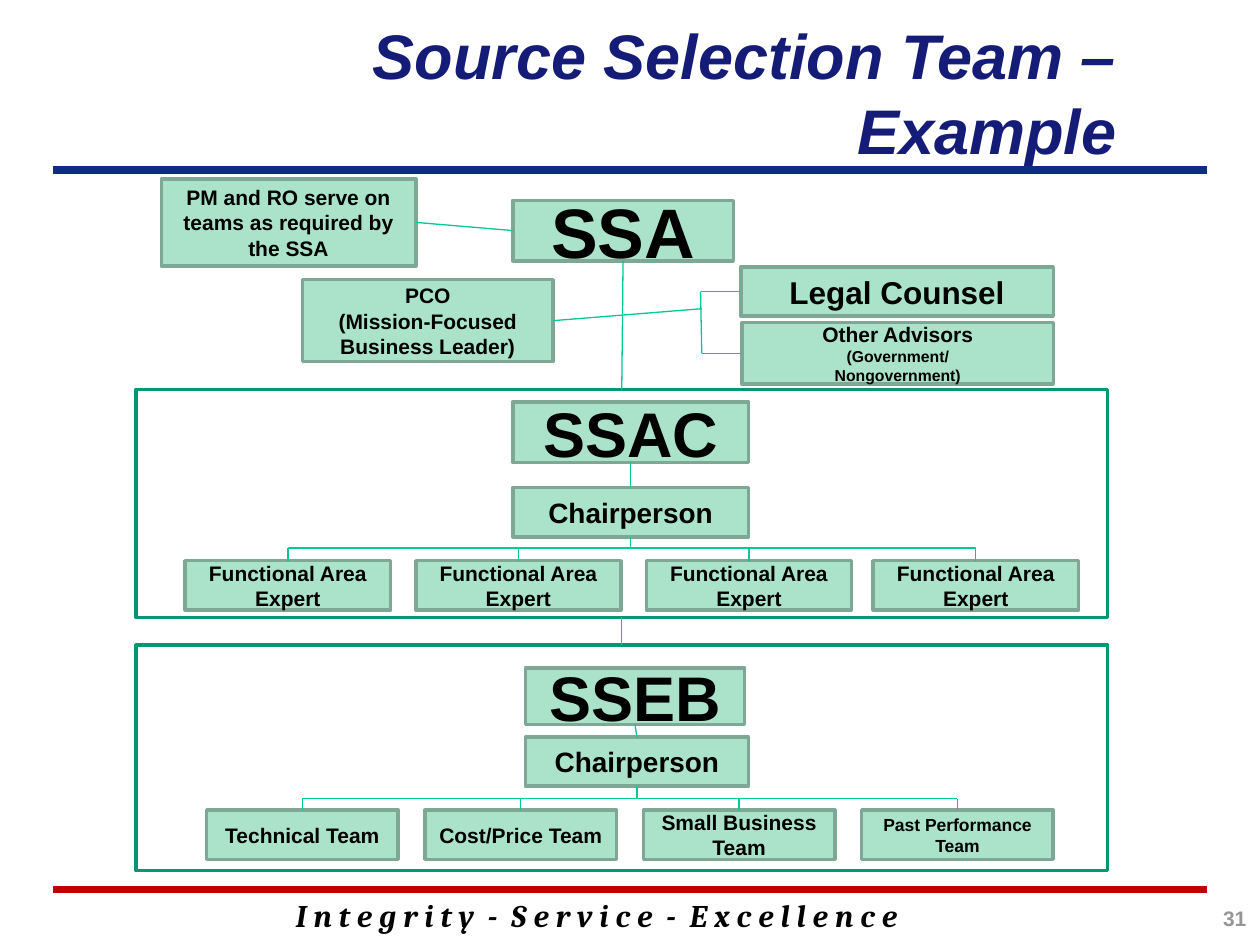
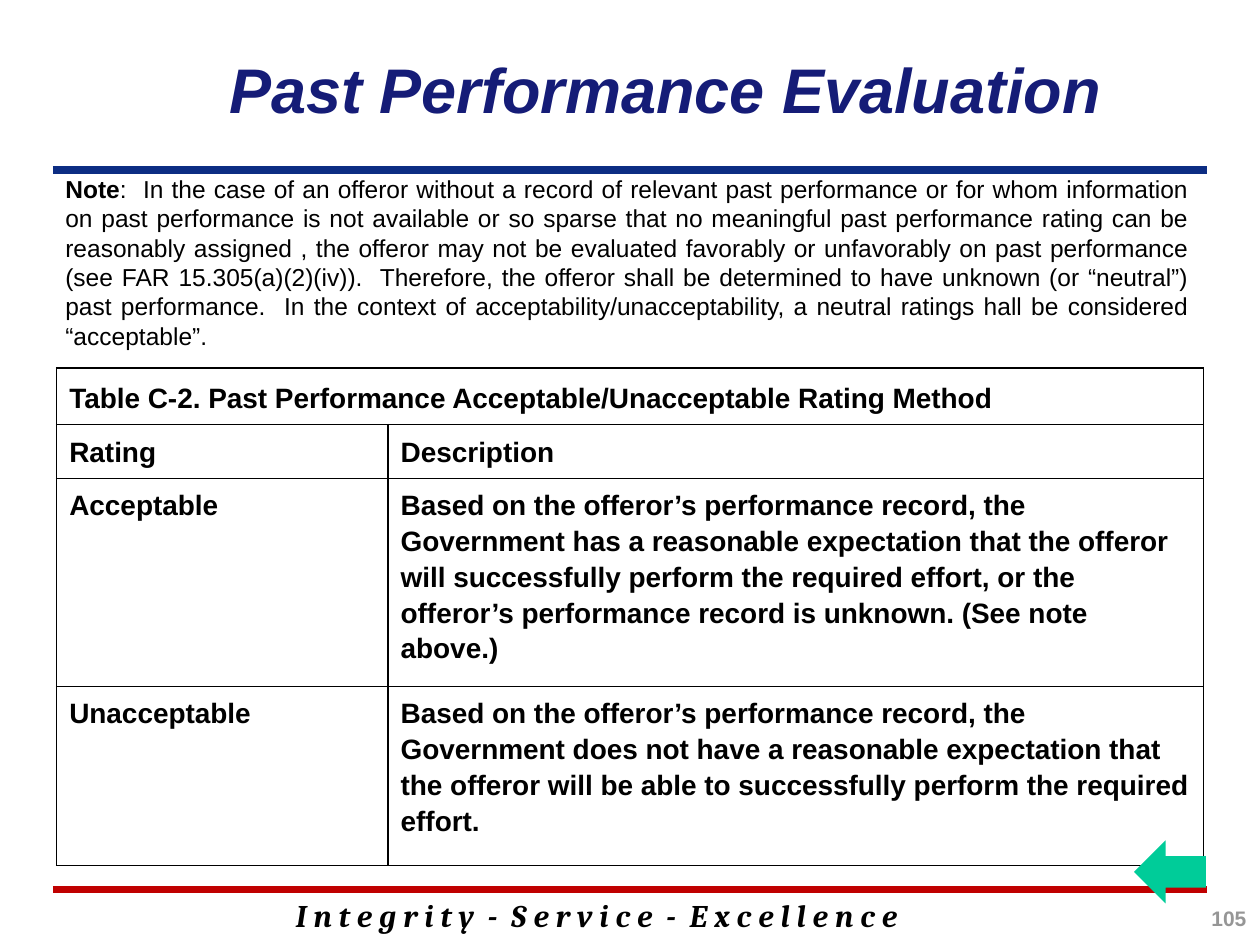
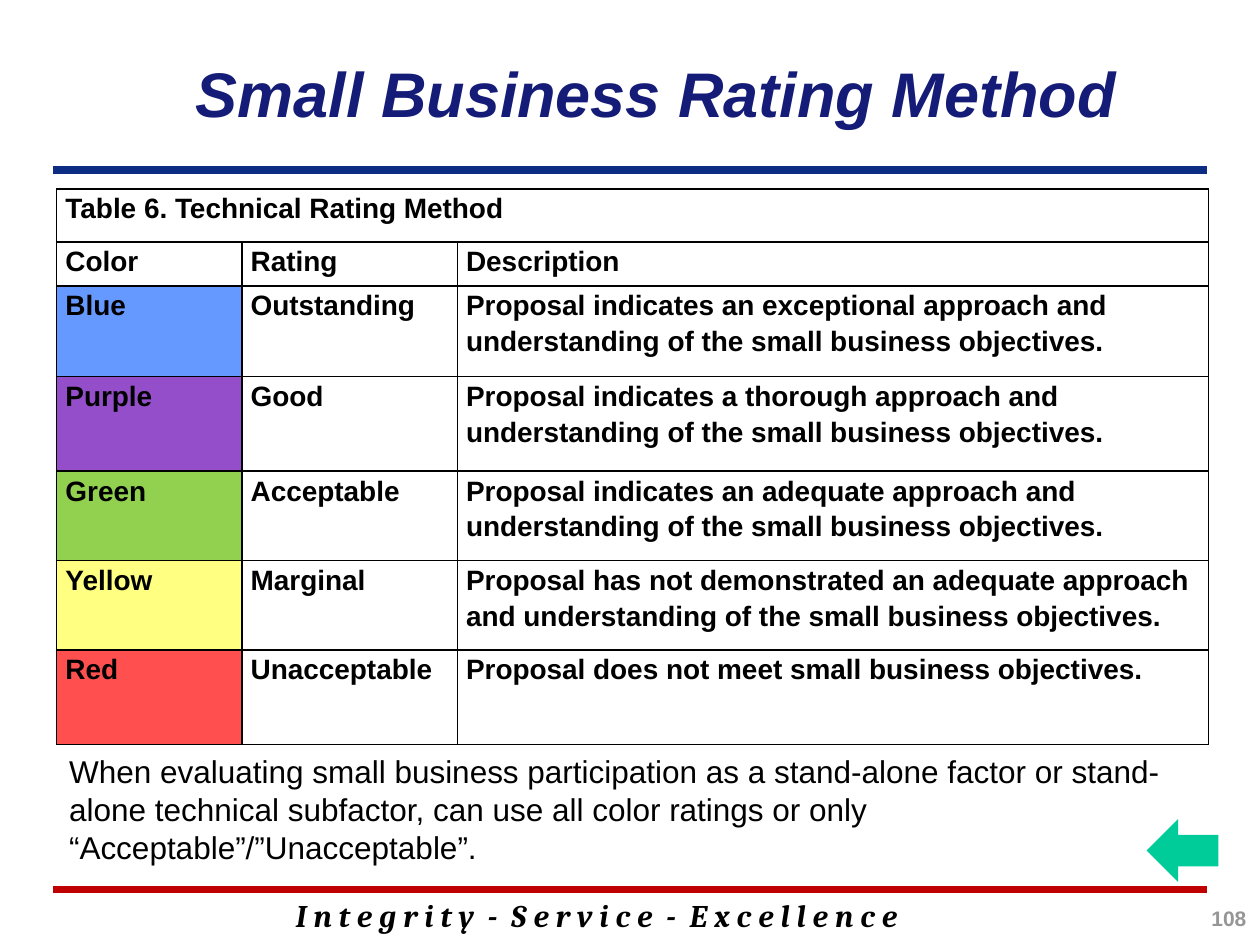
from lxml import etree
from pptx import Presentation
from pptx import util as u
from pptx.dml.color import RGBColor
from pptx.enum import shapes, text
from pptx.oxml import ns

COLORS = {
    "title": "151C77", "top band": "0C2D83", "bottom band": "C00000",
    "ink": "000000", "number": "969696", "arrow": "00CC99",
    "box": "AAE2CA", "box edge": "7EA795", "frame": "009771", "link": "00C896",
    "Blue": "6699FF", "Purple": "954ECA", "Green": "92D050",
    "Yellow": "FFFF81", "Red": "FF4F4F",
}
RGB = {name: RGBColor.from_string(value) for name, value in COLORS.items()}
LEFT, CENTER, RIGHT, JUSTIFY = (
    text.PP_ALIGN.LEFT, text.PP_ALIGN.CENTER, text.PP_ALIGN.RIGHT, text.PP_ALIGN.JUSTIFY)
TOP, LEFT_SIDE, BOTTOM, RIGHT_SIDE = range(4)

prs = Presentation()
prs.slide_width, prs.slide_height = u.Inches(10), u.Inches(7.5)
CELL = prs.slide_width // 100


def write(frame, content, size, color="ink", align=LEFT, bold=True, italic=False,
          face="Arial", later_size=None):
    frame.word_wrap = True
    frame.text = content
    for index, paragraph in enumerate(frame.paragraphs):
        paragraph.alignment = align
        font = paragraph.font
        font.name, font.bold, font.italic = face, bold, italic
        font.size = u.Pt(later_size if index and later_size else size)
        font.color.rgb = RGB[color]


def draw_line(slide, start, end, color="link", width=0.75):
    points = []
    for place, detail in (start, end):
        points += [0, 0] if hasattr(place, "left") else [int(place * CELL), int(detail * CELL)]
    line = slide.shapes.add_connector(shapes.MSO_CONNECTOR.STRAIGHT, *points)
    if hasattr(start[0], "left"):
        line.begin_connect(*start)
    if hasattr(end[0], "left"):
        line.end_connect(*end)
    line.line.color.rgb = RGB[color]
    line.line.width = u.Pt(width)
    etree.SubElement(line._element.spPr, ns.qn("a:effectLst"))


pages = [
    ("Source Selection Team –\vExample", "31", (14.4, 1.2, 75.2, 12.2)),
    ("Past Performance Evaluation", "105", (4.2, 1.3, 84.2, 11.4)),
    ("Small Business Rating Method", "108", (14.4, 1.2, 75.2, 12.2)),
]
motto = "I n t e g r i t y  -  S e r v i c e  -  E x c e l l e n c e"
for heading, number, area in pages:
    slide = prs.slides.add_slide(prs.slide_layouts[5])
    for y, band in ((70.6, "bottom band"), (13.5, "top band")):
        draw_line(slide, (4.2, y), (95.8, y), band, 4.5)
    footer = slide.shapes.add_textbox(*[int(n * CELL) for n in (22.5, 70.6, 60.8, 4)])
    write(footer.text_frame, motto, 18, italic=True, face="Cambria")
    page_number = slide.shapes.add_textbox(*[int(n * CELL) for n in (87.4, 71.4, 12.5, 3.3)])
    write(page_number.text_frame, number, 12, "number", RIGHT)
    title = slide.shapes.title
    title.left, title.top, title.width, title.height = [int(n * CELL) for n in area]
    title.text_frame.auto_size = text.MSO_AUTO_SIZE.NONE
    title.text_frame.vertical_anchor = text.MSO_ANCHOR.MIDDLE
    write(title.text_frame, heading, 36, "title", RIGHT, italic=True)

team, past_performance, small_business = prs.slides

boxes = {
    "ssa": ("SSA", 40, 40.7, 15.9, 17.5, 4.8),
    "pm": ("PM and RO serve on teams as required by the SSA", 12, 12.8, 14.2, 20.2, 6.9),
    "pco": ("PCO\n(Mission-Focused Business Leader)", 12, 24, 22.2, 19.9, 6.5),
    "legal": ("Legal Counsel", 18, 58.8, 21.2, 24.8, 3.9),
    "advisors": ("Other Advisors\n(Government/\nNongovernment)", 12, 58.9, 25.6, 24.7, 4.9),
    "ssac": ("SSAC", 36, 40.7, 31.9, 18.7, 4.8),
    "ssac chair": ("Chairperson", 16, 40.7, 38.7, 18.7, 3.9),
    "sseb": ("SSEB", 36, 41.7, 53, 17.4, 4.5),
    "sseb chair": ("Chairperson", 16, 41.7, 58.5, 17.7, 3.9),
    "ssac frame": ("", 12, 10.8, 30.9, 77.1, 18.1),
    "sseb frame": ("", 12, 10.8, 51.2, 77.1, 17.9),
}
for index, left in enumerate((14.7, 33, 51.3, 69.3)):
    boxes["expert", index] = ("Functional Area Expert", 12, left, 44.5, 16.3, 3.9)
team_names = ("Technical Team", "Cost/Price Team", "Small Business Team", "Past Performance Team")
for index, name in enumerate(team_names):
    size = 10 if name.startswith("Past") else 12
    boxes["team", index] = (name, size, 16.4 + 17.33 * index, 64.3, 15.2, 3.9)

chart = {}
for key, (label, size, *area) in boxes.items():
    box = team.shapes.add_shape(shapes.MSO_SHAPE.RECTANGLE, *[int(n * CELL) for n in area])
    box.shadow.inherit = False
    box.line.width = u.Pt(2)
    if label:
        box.fill.solid()
        box.fill.fore_color.rgb = RGB["box"]
        box.line.color.rgb = RGB["box edge"]
        box.text_frame.vertical_anchor = text.MSO_ANCHOR.MIDDLE
        write(box.text_frame, label, size, align=CENTER,
              later_size=9 if key == "advisors" else None)
    else:
        box.fill.background()
        box.line.color.rgb = RGB["frame"]
    chart[key] = box

for upper, lower in (("ssa", "ssac frame"), ("ssac", "ssac chair"),
                     ("ssac frame", "sseb frame"), ("sseb", "sseb chair")):
    draw_line(team, (chart[upper], BOTTOM), (chart[lower], TOP))
draw_line(team, (chart["pm"], RIGHT_SIDE), (chart["ssa"], LEFT_SIDE))
draw_line(team, (chart["pco"], RIGHT_SIDE), (55.7, 24.5))
draw_line(team, (55.6, 23.15), (55.7, 28.05))
draw_line(team, (55.6, 23.15), (chart["legal"], LEFT_SIDE))
draw_line(team, (55.7, 28.05), (chart["advisors"], LEFT_SIDE))
for chair, member, bus in (("ssac chair", "expert", 43.5), ("sseb chair", "team", 63.4)):
    members = [chart[member, index] for index in range(4)]
    centers = [(m.left + m.width / 2) / CELL for m in members]
    chair_center = (chart[chair].left + chart[chair].width / 2) / CELL
    draw_line(team, (chart[chair], BOTTOM), (chair_center, bus))
    draw_line(team, (centers[0], bus), (centers[-1], bus))
    for box, center in zip(members, centers):
        draw_line(team, (box, TOP), (center, bus))

objectives = "understanding of the small business objectives."
tables = [
    (past_performance, 29.2, (26.3, 64.7), (4.5, 3.9, 14.2, 14.2), (1, 0.6), [
        ["Table C-2. Past Performance Acceptable/Unacceptable Rating Method"],
        ["Rating", "Description"],
        ["Acceptable", "Based on the offeror’s performance record, the Government has a "
         "reasonable expectation that the offeror will successfully perform the required "
         "effort, or the offeror’s performance record is unknown. (See note above.)"],
        ["Unacceptable", "Based on the offeror’s performance record, the Government does not "
         "have a reasonable expectation that the offeror will be able to successfully "
         "perform the required effort."],
    ]),
    (small_business, 15, (14.7, 17.1, 59.6), (4.2, 3.5, 7.2, 7.5, 7.1, 7.1, 7.5), (0.7, 0), [
        ["Table 6. Technical Rating Method"],
        ["Color", "Rating", "Description"],
        ["Blue", "Outstanding", "Proposal indicates an exceptional approach and " + objectives],
        ["Purple", "Good", "Proposal indicates a thorough approach and " + objectives],
        ["Green", "Acceptable", "Proposal indicates an adequate approach and " + objectives],
        ["Yellow", "Marginal",
         "Proposal has not demonstrated an adequate approach and " + objectives],
        ["Red", "Unacceptable", "Proposal does not meet small business objectives."],
    ]),
]
for slide, top, columns, rows, (side_margin, end_margin), ratings in tables:
    area = [int(n * CELL) for n in (4.5, top, sum(columns), sum(rows))]
    table = slide.shapes.add_table(len(rows), len(columns), *area).table
    table.first_row = table.horz_banding = False
    for column, width in zip(table.columns, columns):
        column.width = int(width * CELL)
    for row, height in zip(table.rows, rows):
        row.height = int(height * CELL)
    table.cell(0, 0).merge(table.cell(0, len(columns) - 1))
    for row, entries in zip(table.rows, ratings):
        for index, cell in enumerate(row.cells):
            entry = entries[index] if index < len(entries) else ""
            cell.margin_left = cell.margin_right = int(side_margin * CELL)
            cell.margin_top = cell.margin_bottom = int(end_margin * CELL)
            write(cell.text_frame, entry, 16)
            cell.text_frame.paragraphs[0].line_spacing = 1.15
            if entry in COLORS:
                cell.fill.solid()
                cell.fill.fore_color.rgb = RGB[entry]
            else:
                cell.fill.background()
            properties = cell._tc.get_or_add_tcPr()
            for order, side in enumerate(("lnL", "lnR", "lnT", "lnB")):
                border = etree.Element(ns.qn("a:" + side), w=str(u.Pt(1)))
                solid = etree.SubElement(border, ns.qn("a:solidFill"))
                etree.SubElement(solid, ns.qn("a:srgbClr"), val=COLORS["ink"])
                properties.insert(order, border)
    table.cell(0, 0).vertical_anchor = (
        text.MSO_ANCHOR.MIDDLE if slide is past_performance else text.MSO_ANCHOR.TOP)

remarks = [
    (past_performance, (4.2, 13.3, 91.2, 15.1), 14, JUSTIFY, "Note",
     ":  In the case of an offeror without a record of relevant past performance or for whom "
     "information on past performance is not available or so sparse that no meaningful past "
     "performance rating can be reasonably assigned , the offeror may not be evaluated "
     "favorably or unfavorably on past performance (see FAR 15.305(a)(2)(iv)).  Therefore, "
     "the offeror shall be determined to have unknown (or “neutral”) past performance.  In "
     "the context of acceptability/unacceptability, a neutral ratings hall be considered "
     "“acceptable”.", (90, 66.7)),
    (small_business, (4.5, 59.2, 91.4, 10.1), 18, LEFT, "",
     "When evaluating small business participation as a stand-alone factor or stand-alone "
     "technical subfactor, can use all color ratings or only “Acceptable”/”Unacceptable”.",
     (91, 65)),
]
for slide, area, size, align, lead, remark, corner in remarks:
    note = slide.shapes.add_textbox(*[int(n * CELL) for n in area])
    write(note.text_frame, lead, size, align=align, bold=False)
    paragraph = note.text_frame.paragraphs[0]
    for run in paragraph.runs:
        run.font.bold = True
    paragraph.add_run().text = remark
    back = slide.shapes.add_shape(
        shapes.MSO_SHAPE.RIGHT_ARROW, *[int(n * CELL) for n in (*corner, 5.7, 5)])
    back.rotation = 180
    back.shadow.inherit = False
    back.fill.solid()
    back.fill.fore_color.rgb = RGB["arrow"]
    back.line.fill.background()

prs.save("out.pptx")
